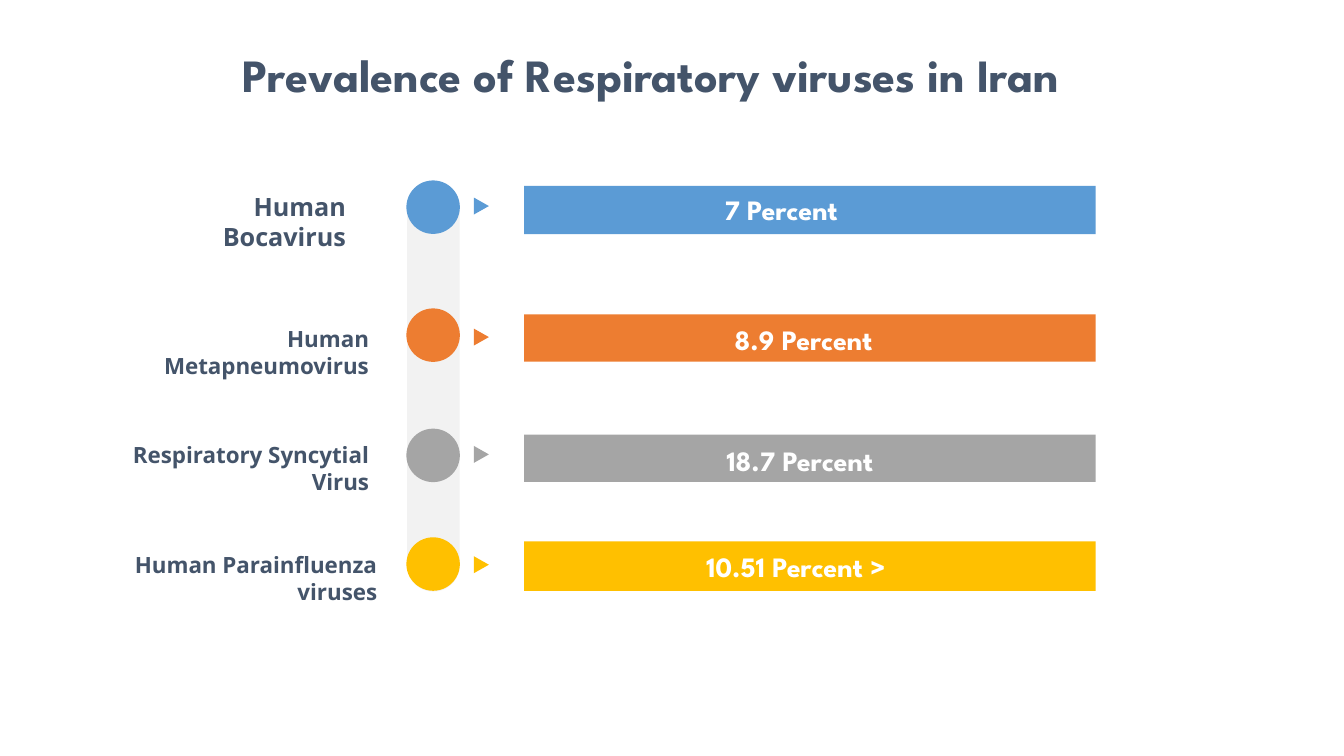
from collections import namedtuple

from pptx import Presentation
from pptx.dml.color import RGBColor
from pptx.enum.shapes import MSO_SHAPE
from pptx.enum.text import PP_ALIGN
from pptx.util import Pt

RECTANGLE = MSO_SHAPE.RECTANGLE
ROUNDED = MSO_SHAPE.ROUNDED_RECTANGLE
OVAL = MSO_SHAPE.OVAL
TRIANGLE = MSO_SHAPE.ISOSCELES_TRIANGLE
LEFT, CENTER, RIGHT = PP_ALIGN.LEFT, PP_ALIGN.CENTER, PP_ALIGN.RIGHT

HEADING_FONT, LABEL_FONT = "League Spartan", "Open Sans"
DARK, WHITE, STRIP_GREY = "44546A", "FFFFFF", "F2F2F2"

BAR_LEFT, BAR_WIDTH = 374.4, 408.2
CIRCLE_LEFT, CIRCLE_SIZE = 290.3, 38.2
ARROW_LEFT, ARROW_WIDTH, ARROW_HEIGHT = 337.7, 12.2, 10.8

# label_box and value_box hold left, top and width
Virus = namedtuple("Virus", "label label_size label_box value value_box "
                            "color bar_top bar_height circle_top arrow_top")

VIRUSES = [
    Virus("Human Bocavirus", 18, (85, 133.2, 169.2),
          "7 Percent", (510.5, 133.9, 105),
          "5B9BD5", 132.7, 34.5, 128.9, 141.8),
    Virus("Human Metapneumovirus", 16, (59, 229, 211.7),
          "8.9 Percent", (517.7, 226.8, 122.4),
          "ED7D31", 224.5, 33.8, 220.3, 235.4),
    Virus("Respiratory Syncytial Virus", 16, (46.1, 311.8, 224.6),
          "18.7 Percent", (511.9, 313.2, 133.2),
          "A5A5A5", 310.5, 33.8, 306.2, 319.2),
    Virus("Human Parainfluenza viruses", 16, (36.7, 390.2, 239.8),
          "10.51 Percent >", (497.5, 388.8, 162),
          "FFC000", 386.7, 35.3, 383.8, 398),
]


def rgb(color):
    return RGBColor.from_string(color)


def add_block(slide, kind, left, top, width, height, color):
    """Add a filled shape without an outline."""
    shape = slide.shapes.add_shape(kind, Pt(left), Pt(top), Pt(width), Pt(height))
    shape.shadow.inherit = False
    shape.fill.solid()
    shape.fill.fore_color.rgb = rgb(color)
    shape.line.fill.background()
    return shape


def add_text(slide, text, box, height, size, font_name, color, alignment):
    """Add one bold paragraph in a box given as left, top, width."""
    left, top, width = box
    text_box = slide.shapes.add_textbox(Pt(left), Pt(top), Pt(width), Pt(height))
    text_frame = text_box.text_frame
    text_frame.word_wrap = True
    text_frame.text = text
    paragraph = text_frame.paragraphs[0]
    paragraph.alignment = alignment
    font = paragraph.runs[0].font
    font.name = font_name
    font.size = Pt(size)
    font.bold = True
    font.color.rgb = rgb(color)
    return paragraph


def add_virus_row(slide, virus):
    # Bar with its value
    add_block(slide, RECTANGLE, BAR_LEFT, virus.bar_top, BAR_WIDTH,
              virus.bar_height, virus.color)
    add_text(slide, virus.value, virus.value_box, 31.7, 20,
             HEADING_FONT, WHITE, LEFT)

    # Label, circle and arrow
    add_text(slide, virus.label, virus.label_box, 26.6, virus.label_size,
             LABEL_FONT, DARK, RIGHT)
    add_block(slide, OVAL, CIRCLE_LEFT, virus.circle_top,
              CIRCLE_SIZE, CIRCLE_SIZE, virus.color)
    arrow = add_block(slide, TRIANGLE, ARROW_LEFT, virus.arrow_top,
                      ARROW_WIDTH, ARROW_HEIGHT, virus.color)
    arrow.rotation = 90


def main():
    presentation = Presentation()
    presentation.slide_width = Pt(960)
    presentation.slide_height = Pt(540)
    slide = presentation.slides.add_slide(presentation.slide_layouts[6])

    # Title
    title = add_text(slide, "Prevalence of Respiratory viruses in Iran",
                     (134.6, 19.4, 661), 57.6, 33, HEADING_FONT, DARK, CENTER)
    title.line_spacing = Pt(50)

    # Strip behind the circles
    strip = add_block(slide, ROUNDED, 290.9, 129.6, 37.4, 293, STRIP_GREY)
    strip.adjustments[0] = 0.5

    for virus in VIRUSES:
        add_virus_row(slide, virus)

    presentation.save("out.pptx")


if __name__ == "__main__":
    main()
